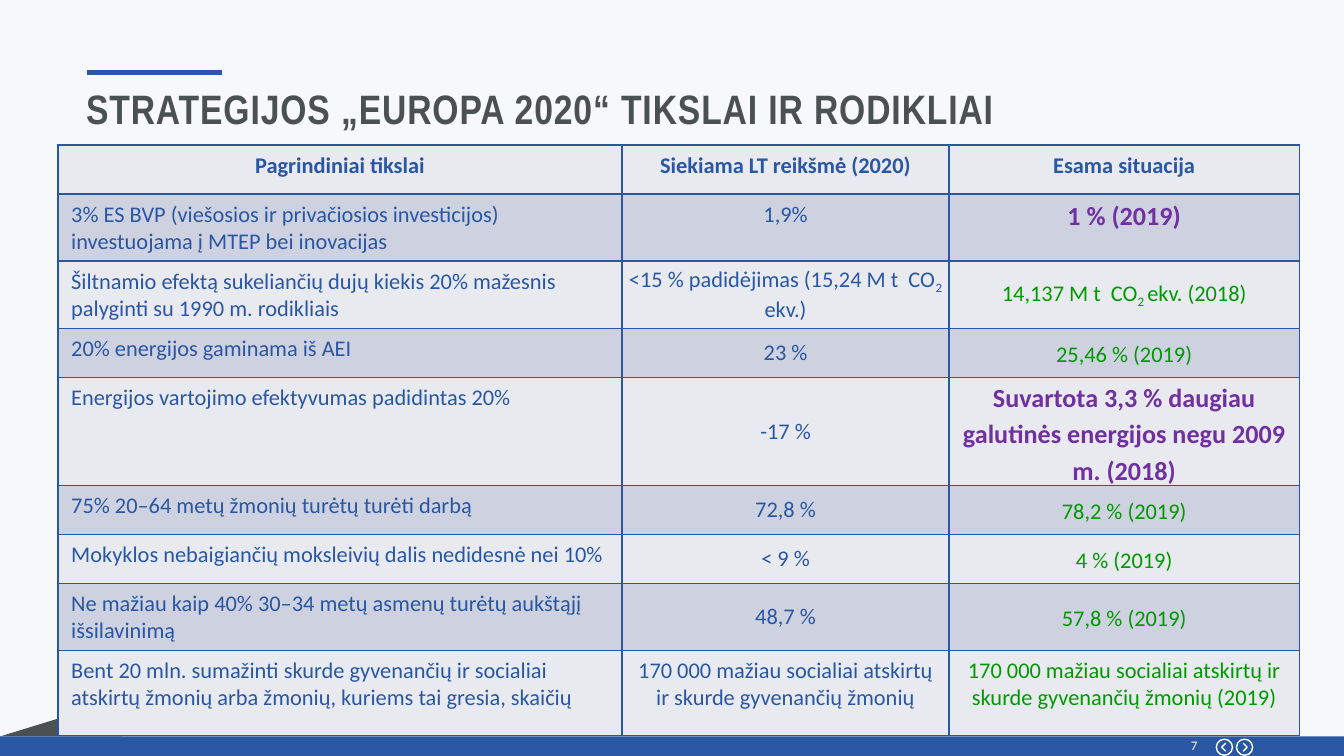
from lxml import etree
from pptx import Presentation
from pptx.dml.color import RGBColor
from pptx.enum.shapes import MSO_CONNECTOR, MSO_SHAPE
from pptx.enum.text import MSO_ANCHOR, PP_ALIGN
from pptx.oxml.ns import qn
from pptx.util import Inches, Pt

RECT, OVAL, STRAIGHT = MSO_SHAPE.RECTANGLE, MSO_SHAPE.OVAL, MSO_CONNECTOR.STRAIGHT
LEFT, CENTER, RIGHT = PP_ALIGN.LEFT, PP_ALIGN.CENTER, PP_ALIGN.RIGHT
TOP, MIDDLE = MSO_ANCHOR.TOP, MSO_ANCHOR.MIDDLE

COLORS = {
    "background": "F6F8FA", "blue": "2957A3", "gray": "4B5050", "white": "FFFFFF",
    "light": "E8EAF0", "dark": "CDD1E0", "green": "009900", "purple": "7030A0",
}
C = {name: RGBColor.from_string(value) for name, value in COLORS.items()}

W = 10
H = W * 9 / 16
BAR_TOP = 5.48
COLS = [4.2, 2.43, 2.61]  # inches
ROWS = [26.2, 35.5, 35.5, 26.2, 47.5, 26.2, 26.2, 35.5, 45.4]  # points

# Text between bars is subscript
GOALS = [
    ("Pagrindiniai tikslai", "Siekiama LT reikšmė (2020)", "Esama situacija"),
    ("3% ES BVP (viešosios ir privačiosios investicijos) investuojama į MTEP bei inovacijas",
     "1,9%", "1 % (2019)"),
    ("Šiltnamio efektą sukeliančių dujų kiekis 20% mažesnis palyginti su 1990 m. rodikliais",
     "<15 % padidėjimas (15,24 M t  CO|2 |ekv.)", "14,137 M t  CO|2 |ekv. (2018)"),
    ("20% energijos gaminama iš AEI", "23 %", "25,46 % (2019)"),
    ("Energijos vartojimo efektyvumas padidintas 20%", "-17 %",
     "Suvartota 3,3 % daugiau galutinės energijos negu 2009 m. (2018)"),
    ("75% 20–64 metų žmonių turėtų turėti darbą", "72,8 %", "78,2 % (2019)"),
    ("Mokyklos nebaigiančių moksleivių dalis nedidesnė nei 10%", "< 9 %", "4 % (2019)"),
    ("Ne mažiau kaip 40% 30–34 metų asmenų turėtų aukštąjį išsilavinimą",
     "48,7 %", "57,8 % (2019)"),
    ("Bent 20 mln. sumažinti skurde gyvenančių ir socialiai atskirtų žmonių arba žmonių, "
     "kuriems tai gresia, skaičių",
     "170 000 mažiau socialiai atskirtų ir skurde gyvenančių žmonių",
     "170 000 mažiau socialiai atskirtų ir skurde gyvenančių žmonių (2019)"),
]
MISSED_ROWS = (1, 4)
MIDDLE_ROWS = range(2, 8)


def add_label(box, text, font, size, color, align, bold, spacing):
    """Add a text box without margins; spacing is in hundredths of a point."""
    tf = slide.shapes.add_textbox(*map(Inches, box)).text_frame
    tf.word_wrap = True
    tf.margin_left = tf.margin_right = tf.margin_top = tf.margin_bottom = 0
    p = tf.paragraphs[0]
    p.alignment = align
    r = p.add_run()
    r.text = text
    r.font.name, r.font.size, r.font.bold = font, Pt(size), bold
    r.font.color.rgb = color
    r._r.get_or_add_rPr().set("spc", str(spacing))


def add_borders(cell):
    tcPr = cell._tc.get_or_add_tcPr()
    for side in ("lnL", "lnR", "lnT", "lnB"):
        ln = etree.SubElement(tcPr, qn(f"a:{side}"), w=str(Pt(1)))
        fill = etree.SubElement(ln, qn("a:solidFill"))
        etree.SubElement(fill, qn("a:srgbClr"), val=COLORS["blue"])


prs = Presentation()
prs.slide_width, prs.slide_height = Inches(W), Inches(H)
slide = prs.slides.add_slide(prs.slide_layouts[6])
slide.background.fill.solid()
slide.background.fill.fore_color.rgb = C["background"]

# Corner wedge and footer bar
builder = slide.shapes.build_freeform(0, Inches(BAR_TOP), scale=1.0)
builder.add_line_segments([(Inches(0.91), Inches(5.2)), (Inches(0.91), Inches(BAR_TOP))])
wedge = builder.convert_to_shape()
bar = slide.shapes.add_shape(RECT, 0, Inches(BAR_TOP), Inches(W), Inches(H - BAR_TOP))
for sp, color in ((wedge, "gray"), (bar, "blue")):
    sp.shadow.inherit = False
    sp.fill.solid()
    sp.fill.fore_color.rgb = C[color]
    sp.line.fill.background()

# Title with its accent line
accent = slide.shapes.add_connector(
    STRAIGHT, Inches(0.65), Inches(0.54), Inches(1.65), Inches(0.54))
accent.line.color.rgb = C["blue"]
accent.line.width = Pt(2.25)
etree.SubElement(accent._element.spPr, qn("a:effectLst"))
add_label((0.64, 0.62, 7.55, 0.45), "STRATEGIJOS „EUROPA 2020“ TIKSLAI IR RODIKLIAI",
          "Arial Narrow", 22, C["gray"], LEFT, True, 50)

# Page number and previous / next buttons
add_label((8.68, 5.49, 0.23, 0.12), "7", "Calibri", 7, C["white"], RIGHT, False, 30)
for x, direction in ((9.11, -1), (9.26, 1)):
    ring = slide.shapes.add_shape(
        OVAL, Inches(x - 0.06), Inches(5.5), Inches(0.12), Inches(0.12))
    tip, back = Inches(x + direction * 0.02), Inches(x - direction * 0.01)
    builder = slide.shapes.build_freeform(back, Inches(5.53), scale=1.0)
    builder.add_line_segments([(tip, Inches(5.56)), (back, Inches(5.59))], close=False)
    for sp in (ring, builder.convert_to_shape()):
        sp.shadow.inherit = False
        sp.fill.background()
        sp.line.color.rgb = C["white"]
        sp.line.width = Pt(0.75)

# Goals table
table = slide.shapes.add_table(
    len(ROWS), len(COLS), Inches(0.43), Inches(1.08),
    Inches(sum(COLS)), Pt(sum(ROWS))).table
table.first_row = table.horz_banding = False
for column, width in zip(table.columns, COLS):
    column.width = Inches(width)
for row, height in zip(table.rows, ROWS):
    row.height = Pt(height)

for i, goal in enumerate(GOALS):
    for j, text in enumerate(goal):
        cell = table.cell(i, j)
        add_borders(cell)
        cell.fill.solid()
        cell.fill.fore_color.rgb = C["dark" if i % 2 else "light"]
        p = cell.text_frame.paragraphs[0]
        p.alignment = LEFT if i and j == 0 else CENTER
        if j and i in MIDDLE_ROWS:
            cell.vertical_anchor = MIDDLE
            cell.margin_top = cell.margin_bottom = 0
            spaced = j == 2 and i > 2
            cell.margin_left = cell.margin_right = Inches(0.07 if spaced else 0)
            if spaced:
                p.line_spacing = 1.15
        else:
            cell.vertical_anchor = TOP

        missed = j == 2 and i in MISSED_ROWS
        color = "blue" if i == 0 or j < 2 else "purple" if missed else "green"
        p.font.name, p.font.size = "Calibri", Pt(14 if missed else 12)
        p.font.bold = i == 0 or missed
        p.font.color.rgb = C[color]
        for k, part in enumerate(text.split("|")):
            r = p.add_run()
            r.text = part
            if k % 2:
                r._r.get_or_add_rPr().set("baseline", "-25000")

prs.save("out.pptx")
